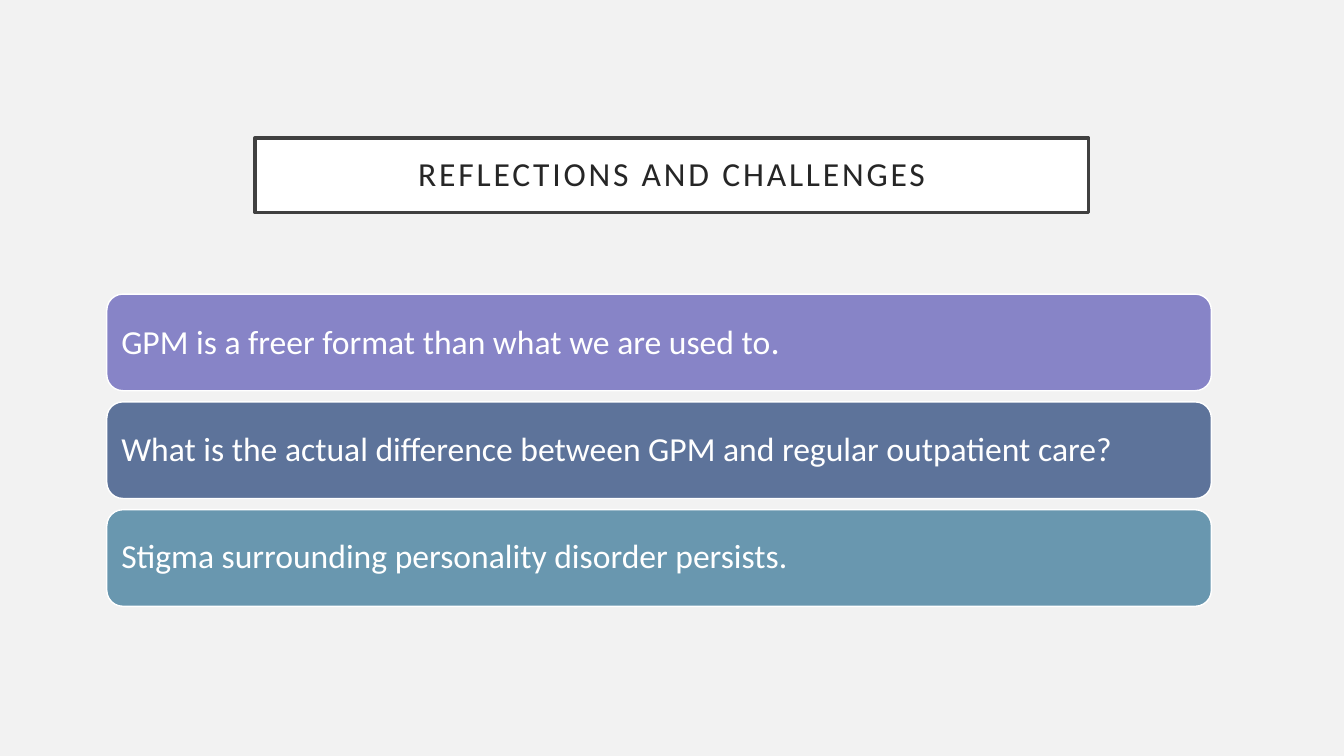
from pptx import Presentation, util as u
from pptx.dml.color import RGBColor
from pptx.enum import shapes, text

Pt = u.Pt
COLOURS = {
    "background": "F2F2F2", "white": "FFFFFF", "frame": "404040", "title": "262626",
    "purple": "8784C7", "blue": "5D739A", "teal": "6997AF",
}
BANDS = [
    ("purple", [("GPM is a freer format than what we are used to", 24), (".", 26)]),
    ("blue", [("What is the actual difference between GPM and regular outpatient care?", 24)]),
    ("teal", [("Stigma surrounding personality disorder persists.", 24)]),
]
BAND_LEFT, BAND_TOP, BAND_WIDTH, BAND_HEIGHT, BAND_PITCH = 76.3, 210.1, 789, 69, 77


def colour(name):
    return RGBColor.from_string(COLOURS[name])


def add_box(slide, kind, place, fill, line, line_width, inset):
    box = slide.shapes.add_shape(kind, *(Pt(length) for length in place))
    box.shadow.inherit = False
    box.fill.solid()
    box.fill.fore_color.rgb = colour(fill)
    box.line.color.rgb = colour(line)
    box.line.width = Pt(line_width)
    frame_format = {"word_wrap": True, "vertical_anchor": text.MSO_ANCHOR.MIDDLE}
    for side in ("left", "top", "right", "bottom"):
        frame_format[f"margin_{side}"] = Pt(inset)
    for name, value in frame_format.items():
        setattr(box.text_frame, name, value)
    return box


def write(box, spans, ink, align, spacing=0):
    """Fill the box with one paragraph; spacing is the gap between letters in points."""
    para = box.text_frame.paragraphs[0]
    para.alignment = align
    para.line_spacing = 0.9
    for wording, size in spans:
        span = para.add_run()
        span.text = wording
        for name, value in {"name": "Calibri", "size": Pt(size)}.items():
            setattr(span.font, name, value)
        span.font.color.rgb = colour(ink)
        if spacing:
            span.font._element.set("spc", str(spacing * 100))


def add_title(slide, wording):
    box = add_box(slide, shapes.MSO_SHAPE.RECTANGLE, (182.2, 98.6, 595.4, 53.3),
                  "white", "frame", 2.5, 14.4)
    write(box, [(wording, 24)], "title", text.PP_ALIGN.CENTER, spacing=2)


def add_band(slide, row, fill, spans):
    place = (BAND_LEFT, BAND_TOP + row * BAND_PITCH, BAND_WIDTH, BAND_HEIGHT)
    box = add_box(slide, shapes.MSO_SHAPE.ROUNDED_RECTANGLE, place, fill, "white", 1, 7)
    write(box, spans, "white", text.PP_ALIGN.LEFT)


def main():
    deck = Presentation()
    deck.slide_width, deck.slide_height = Pt(960), Pt(540)
    slide = deck.slides.add_slide(deck.slide_layouts[6])
    slide.background.fill.solid()
    slide.background.fill.fore_color.rgb = colour("background")
    add_title(slide, "REFLECTIONS AND CHALLENGES")
    for row, (fill, spans) in enumerate(BANDS):
        add_band(slide, row, fill, spans)
    deck.save("out.pptx")


if __name__ == "__main__":
    main()
